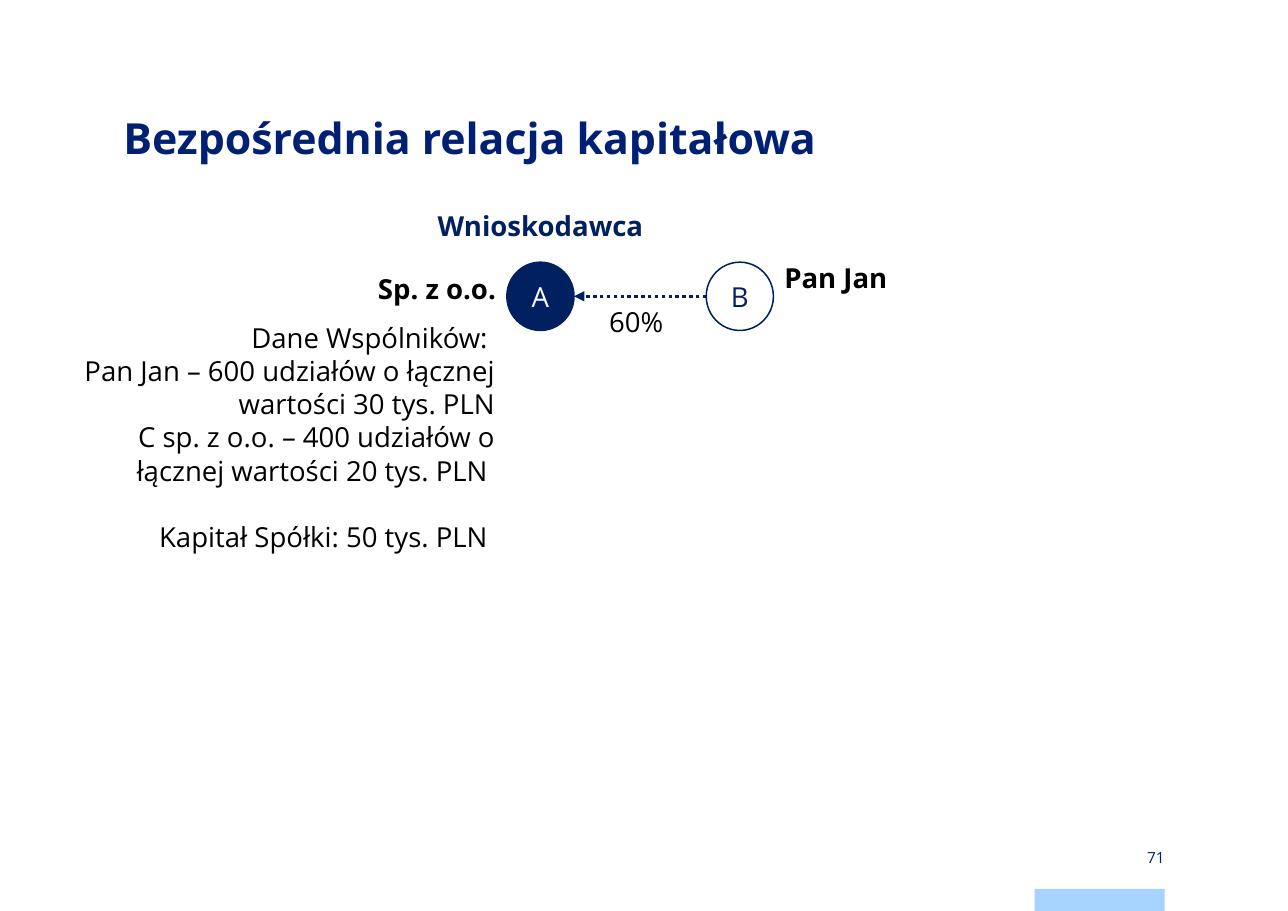
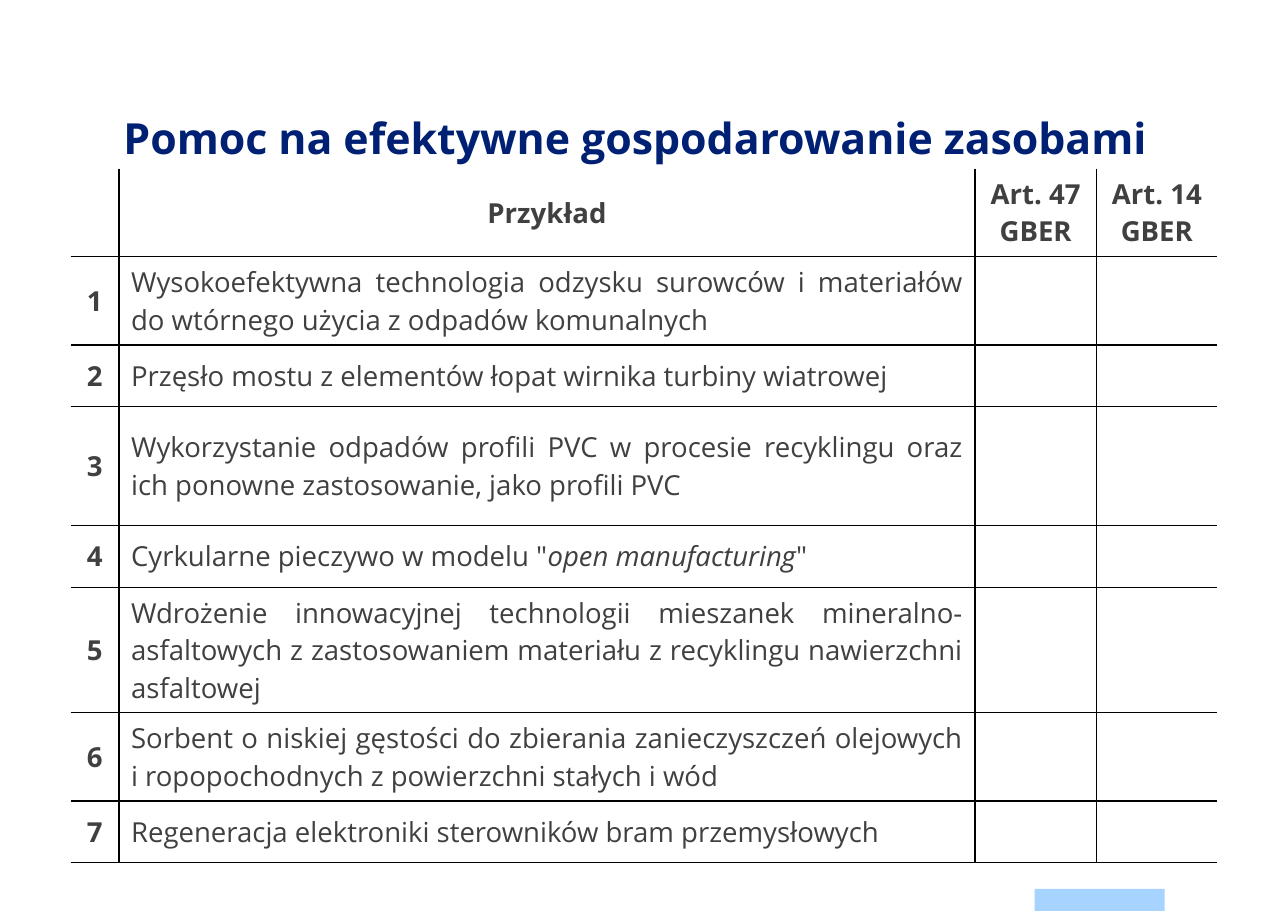
from lxml import etree
from pptx import Presentation
from pptx.dml.color import RGBColor
from pptx.enum.dml import MSO_LINE
from pptx.enum.shapes import MSO_CONNECTOR, MSO_SHAPE
from pptx.enum.text import MSO_ANCHOR, MSO_AUTO_SIZE, PP_ALIGN
from pptx.oxml.ns import qn
from pptx.util import Emu, Pt

# Enum members
LEFT, CENTER, RIGHT, JUSTIFY = PP_ALIGN.LEFT, PP_ALIGN.CENTER, PP_ALIGN.RIGHT, PP_ALIGN.JUSTIFY
TOP, MIDDLE = MSO_ANCHOR.TOP, MSO_ANCHOR.MIDDLE
NO_AUTOFIT = MSO_AUTO_SIZE.NONE
RECTANGLE, OVAL = MSO_SHAPE.RECTANGLE, MSO_SHAPE.OVAL
STRAIGHT, DOTTED = MSO_CONNECTOR.STRAIGHT, MSO_LINE.ROUND_DOT

# Shared style
FONT = "Open Sans"
TITLE_BLUE = RGBColor(0x00, 0x20, 0x73)
NAVY = RGBColor(0x00, 0x20, 0x60)
LIGHT_BLUE = RGBColor(0xA6, 0xD3, 0xFF)
WHITE = RGBColor(0xFF, 0xFF, 0xFF)
BLACK = RGBColor(0x00, 0x00, 0x00)
DARK_GRAY = RGBColor(0x40, 0x40, 0x40)
TEXT_LINE = Pt(21.7)
NO_TABLE_STYLE = "{2D5ABB26-0587-4C30-8999-92F81FD0307C}"

# Content
SHAREHOLDERS = [
    "Dane Wspólników: ",
    "Pan Jan – 600 udziałów o łącznej wartości 30 tys. PLN",
    "C sp. z o.o. – 400 udziałów o łącznej wartości 20 tys. PLN ",
    "Kapitał Spółki: 50 tys. PLN ",
]
HEADINGS = ["", "Przykład", "Art. 47 GBER", "Art. 14 GBER"]
# Each example is a list of runs; every second run is italic
EXAMPLES = [
    ["Wysokoefektywna technologia odzysku surowców i materiałów "
     "do wtórnego użycia z odpadów komunalnych"],
    ["Przęsło mostu z elementów łopat wirnika turbiny wiatrowej"],
    ["Wykorzystanie odpadów profili PVC w procesie recyklingu oraz "
     "ich ponowne zastosowanie, jako profili PVC"],
    ['Cyrkularne pieczywo w modelu "', "open manufacturing", '"'],
    ["Wdrożenie innowacyjnej technologii mieszanek mineralno-asfaltowych "
     "z zastosowaniem materiału z recyklingu nawierzchni asfaltowej"],
    ["Sorbent o niskiej gęstości do zbierania zanieczyszczeń olejowych "
     "i ropopochodnych z powierzchni stałych i wód"],
    ["Regeneracja elektroniki sterowników bram przemysłowych"],
]
COLUMN_WIDTHS = [44, 777, 110, 110]
ROW_HEIGHTS = [78, 79, 56, 108, 56, 113, 79, 56]


def px(length):
    """100 px to the inch."""
    return Emu(length * 9144)


def style(paragraph, color, size=18, bold=False, align=LEFT):
    paragraph.alignment = align
    font = paragraph.font
    font.name, font.size, font.bold = FONT, Pt(size), bold
    font.color.rgb = color


def set_margins(frame, horizontal, vertical):
    frame.margin_left = frame.margin_right = px(horizontal)
    frame.margin_top = frame.margin_bottom = px(vertical)


def add_accent(slide):
    accent = slide.shapes.add_shape(RECTANGLE, px(939), px(807), px(118), px(20))
    accent.shadow.inherit = False
    accent.fill.solid()
    accent.fill.fore_color.rgb = LIGHT_BLUE
    accent.line.fill.background()


def add_slide(prs, heading):
    slide = prs.slides.add_slide(prs.slide_layouts[5])
    add_accent(slide)
    title = slide.shapes.title
    title.left, title.top, title.width, title.height = px(112), px(98), px(945), px(118)
    frame = title.text_frame
    frame.text = heading
    frame.auto_size = NO_AUTOFIT
    frame.vertical_anchor = TOP
    set_margins(frame, 0, 0)
    paragraph = frame.paragraphs[0]
    paragraph.line_spacing = Pt(36)
    style(paragraph, TITLE_BLUE, 28, True)
    return slide


def add_text(slide, box, lines, color=BLACK, size=18, bold=False, align=LEFT):
    frame = slide.shapes.add_textbox(*map(px, box)).text_frame
    frame.word_wrap = True
    frame.text = "\n".join(lines)
    for paragraph in frame.paragraphs:
        style(paragraph, color, size, bold, align)
        paragraph.line_spacing = TEXT_LINE
    return frame


def add_party(slide, left, letter, fill, color):
    party = slide.shapes.add_shape(OVAL, px(left), px(238), px(61), px(62))
    party.shadow.inherit = False
    party.fill.solid()
    party.fill.fore_color.rgb = fill
    party.line.color.rgb = NAVY
    party.line.width = Pt(1)
    frame = party.text_frame
    frame.text = letter
    frame.vertical_anchor = MIDDLE
    style(frame.paragraphs[0], color, align=CENTER)


def add_dotted_arrow(slide, start, end):
    arrow = slide.shapes.add_connector(STRAIGHT, *map(px, start + end))
    arrow.line.color.rgb = NAVY
    arrow.line.width = Pt(2.25)
    arrow.line.dash_style = DOTTED
    properties = arrow.element.spPr
    etree.SubElement(properties.find(qn("a:ln")), qn("a:tailEnd"), type="triangle")
    etree.SubElement(properties, qn("a:effectLst"))


def set_borders(cell, sides):
    properties = cell._tc.get_or_add_tcPr()
    for side in sides:
        border = etree.SubElement(properties, qn("a:ln" + side), w=str(Pt(1)))
        fill = etree.SubElement(border, qn("a:solidFill"))
        etree.SubElement(fill, qn("a:srgbClr"), val=str(BLACK))


def fill_cell(cell, runs, bold, align):
    frame = cell.text_frame
    set_margins(cell, 11, 6)
    cell.vertical_anchor = MIDDLE
    paragraph = frame.paragraphs[0]
    style(paragraph, DARK_GRAY, bold=bold, align=align)
    for index, text in enumerate(runs):
        run = paragraph.add_run()
        run.text = text
        if index % 2:
            run.font.italic = True


def add_examples_table(slide):
    rows = [[[heading] for heading in HEADINGS]]
    rows += [[[str(number)], example, [], []] for number, example in enumerate(EXAMPLES, 1)]
    graphic = slide.shapes.add_table(len(rows), len(HEADINGS), px(64), px(153),
                                     px(sum(COLUMN_WIDTHS)), px(sum(ROW_HEIGHTS)))
    table = graphic.table
    table.first_row = table.horz_banding = False
    table._tbl.tblPr.find(qn("a:tableStyleId")).text = NO_TABLE_STYLE
    for column, width in zip(table.columns, COLUMN_WIDTHS):
        column.width = px(width)
    last_column = len(HEADINGS) - 1
    for r, (contents, height) in enumerate(zip(rows, ROW_HEIGHTS)):
        table.rows[r].height = px(height)
        for c, runs in enumerate(contents):
            cell = table.cell(r, c)
            is_example = r > 0 and c == 1
            fill_cell(cell, runs, not is_example, JUSTIFY if is_example else CENTER)
            # Inner lines and the bottom edge only
            drawn = {"L": c > 0, "R": c < last_column, "T": r > 0, "B": True}
            set_borders(cell, [side for side, shown in drawn.items() if shown])
            cell.fill.background()


def build_relation_slide(prs):
    slide = add_slide(prs, "Bezpośrednia relacja kapitałowa")
    # Parties and the share held
    add_party(slide, 460, "A", NAVY, WHITE)
    add_party(slide, 641, "B", WHITE, NAVY)
    add_dotted_arrow(slide, (641, 269), (521, 269))
    add_text(slide, (531, 272, 93, 40), ["60%"], align=CENTER)
    # Labels
    add_text(slide, (386, 185, 209, 40), ["Wnioskodawca"], NAVY, bold=True, align=CENTER)
    add_text(slide, (65, 242, 395, 40), ["Sp. z o.o."], bold=True, align=RIGHT)
    add_text(slide, (702, 232, 404, 40), ["Pan Jan"], bold=True)
    # Shareholder details, with the capital set apart by one line
    details = add_text(slide, (64, 286, 395, 222), SHAREHOLDERS, align=RIGHT)
    details.paragraphs[-1].space_before = TEXT_LINE
    # Page number
    page = add_text(slide, (939, 768, 118, 20), ["71"], TITLE_BLUE, 10, align=RIGHT)
    page.vertical_anchor = MIDDLE
    set_margins(page, 0, 0)
    page.paragraphs[0].line_spacing = 1.0


def build_examples_slide(prs):
    slide = add_slide(prs, "Pomoc na efektywne gospodarowanie zasobami")
    add_examples_table(slide)


def main():
    prs = Presentation()
    prs.slide_width, prs.slide_height = px(1169), px(827)
    build_relation_slide(prs)
    build_examples_slide(prs)
    prs.save("out.pptx")


if __name__ == "__main__":
    main()
